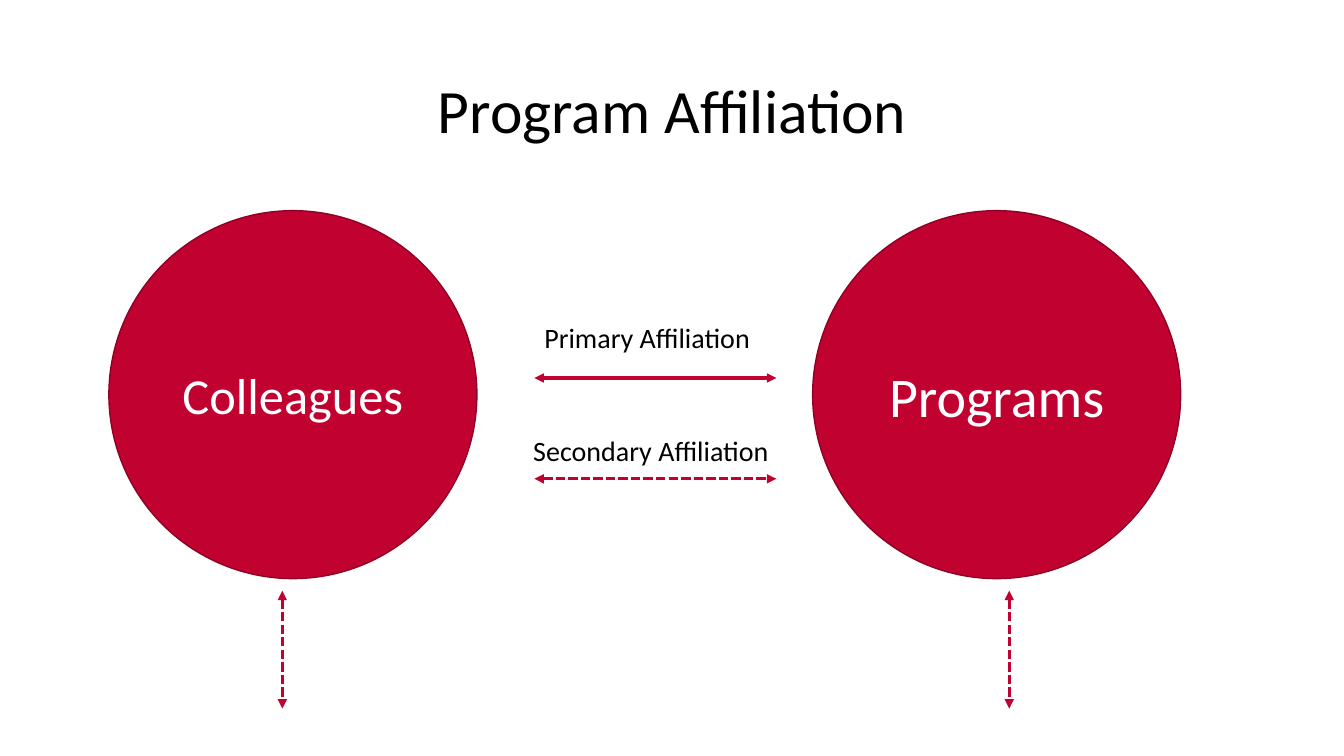
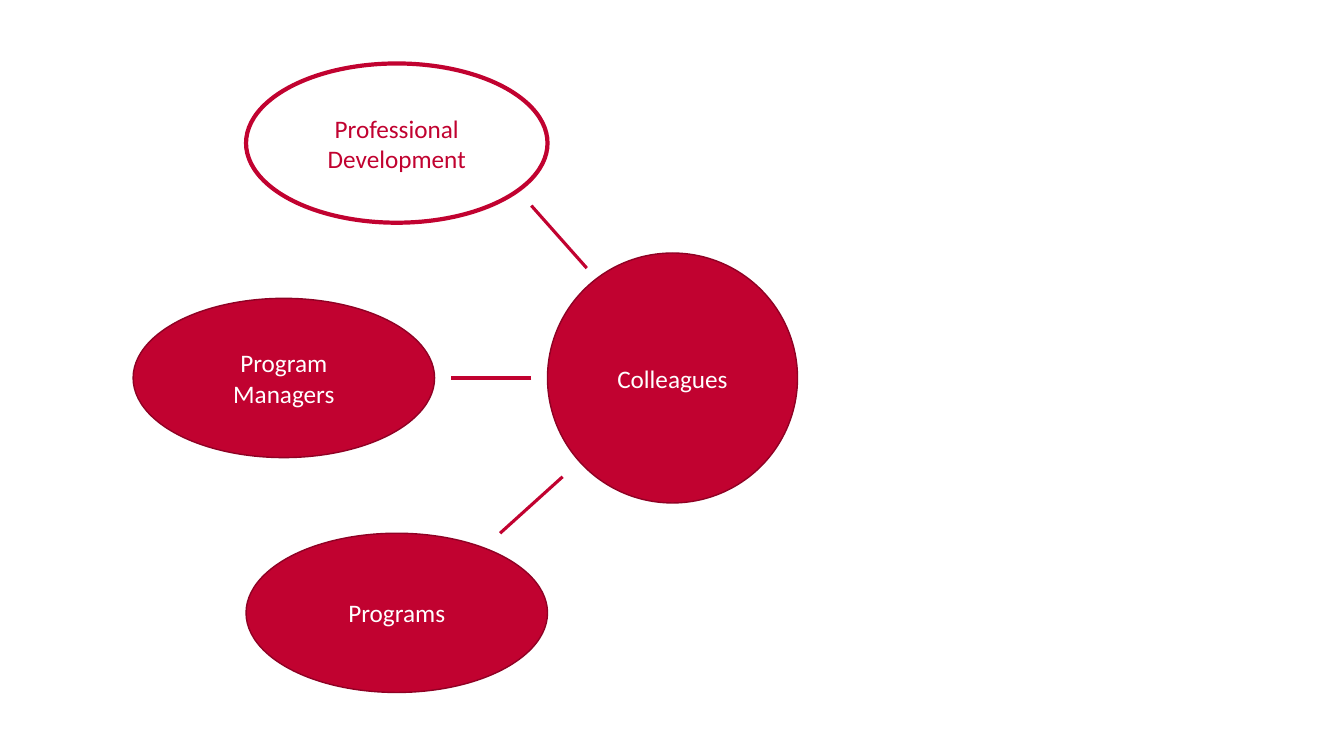
from dataclasses import dataclass

from lxml.etree import SubElement
from pptx import Presentation
from pptx.dml.color import RGBColor
from pptx.enum.dml import MSO_LINE
from pptx.enum.shapes import MSO_CONNECTOR, MSO_SHAPE
from pptx.enum.text import MSO_ANCHOR, PP_ALIGN
from pptx.oxml.ns import qn
from pptx.util import Inches, Pt


@dataclass(frozen=True)
class Theme:
    font: str = "Calibri"
    red: str = "C10230"
    dark_red: str = "8F0124"
    black: str = "000000"
    white: str = "FFFFFF"
    title: int = 44
    label: int = 20
    node: int = 18
    edge: float = 1
    line: float = 2.25
    outline: float = 3


T = Theme()


def rgb(color):
    return RGBColor.from_string(color)


# Shared parts
def write(tf, text, size, color=T.black, align=PP_ALIGN.LEFT,
          anchor=MSO_ANCHOR.TOP, spacing=None):
    tf.word_wrap = True
    tf.vertical_anchor = anchor
    p = tf.paragraphs[0]
    p.alignment = align
    if spacing:
        p.line_spacing = spacing
    r = p.add_run()
    r.text = text
    r.font.name = T.font
    r.font.size = Pt(size)
    r.font.color.rgb = rgb(color)


def add_text(s, box, text, size, **fmt):
    tb = s.shapes.add_textbox(*map(Inches, box))
    write(tb.text_frame, text, size, **fmt)


def add_title(s, box, text):
    add_text(s, box, text, T.title, align=PP_ALIGN.CENTER,
             anchor=MSO_ANCHOR.MIDDLE, spacing=0.9)


def add_ellipse(s, box, text, size, outlined=False):
    sp = s.shapes.add_shape(MSO_SHAPE.OVAL, *map(Inches, box))
    sp.shadow.inherit = False
    sp.fill.solid()
    sp.fill.fore_color.rgb = rgb(T.white if outlined else T.red)
    sp.line.color.rgb = rgb(T.red if outlined else T.dark_red)
    sp.line.width = Pt(T.outline if outlined else T.edge)
    write(sp.text_frame, text, size, color=T.red if outlined else T.white,
          align=PP_ALIGN.CENTER, anchor=MSO_ANCHOR.MIDDLE)


def add_line(s, start, end, arrows=False, dashed=False):
    ln = s.shapes.add_connector(MSO_CONNECTOR.STRAIGHT,
                                *map(Inches, (*start, *end)))
    ln.line.color.rgb = rgb(T.red)
    ln.line.width = Pt(T.line)
    if dashed:
        ln.line.dash_style = MSO_LINE.SQUARE_DOT
    if arrows:
        for tag in ("a:headEnd", "a:tailEnd"):
            SubElement(ln.line._get_or_add_ln(), qn(tag)).set("type", "triangle")
    SubElement(ln._element.spPr, qn("a:effectLst"))


# Two circles joined by labelled arrows
def affiliation_diagram(s, box):
    x, y, w, h = box
    circles = [("Colleagues", 36, x, 1.72), ("Programs", 40, x + w - h, 1.95)]
    for text, size, left, arrow_dx in circles:
        add_ellipse(s, (left, y, h, h), text, size)
        arrow_x, arrow_y = left + arrow_dx, y + h + 0.12
        add_line(s, (arrow_x, arrow_y), (arrow_x, arrow_y + 1.17),
                 arrows=True, dashed=True)

    # Arrows between the circles: text, label box offset and width, arrow offset
    links = [("Primary Affiliation", 4.22, 1.04, 2.39, 1.66, False),
             ("Secondary Affiliation", 4.11, 2.16, 2.59, 2.66, True)]
    for text, dx, dy, width, arrow_dy, dashed in links:
        add_text(s, (x + dx, y + dy, width, 0.44), text, T.label)
        add_line(s, (x + 4.22, y + arrow_dy), (x + 6.62, y + arrow_dy),
                 arrows=True, dashed=dashed)


# One circle with three ellipses on its left
def colleague_map(s, box):
    x, y, w, h = box
    hub, node_w, node_h = 2.48, 2.99, 1.58
    add_ellipse(s, (x + w - hub, y + (h - hub) / 2, hub, hub),
                "Colleagues", T.node)

    # Ellipses, evenly spaced: text, left offset, outlined, line to the circle
    nodes = [
        ("Professional Development", 1.12, True, (4.5, 2.03), (3.95, 1.41)),
        ("Program Managers", 0, False, (3.95, 3.12), (3.15, 3.12)),
        ("Programs", 1.12, False, (4.26, 4.1), (3.64, 4.66)),
    ]
    step = (h - node_h) / (len(nodes) - 1)
    for i, (text, dx, outlined, start, end) in enumerate(nodes):
        add_ellipse(s, (x + dx, y + i * step, node_w, node_h),
                    text, T.node, outlined)
        add_line(s, (x + start[0], y + start[1]), (x + end[0], y + end[1]))


def main():
    prs = Presentation()
    prs.slide_width, prs.slide_height = Inches(13.33), Inches(7.5)
    blank = prs.slide_layouts[6]

    s = prs.slides.add_slide(blank)
    add_title(s, (0.92, 0.4, 11.5, 1.45), "Program Affiliation")
    affiliation_diagram(s, (1.08, 2.09, 10.63, 3.65))

    s = prs.slides.add_slide(blank)
    colleague_map(s, (1.32, 0.63, 6.59, 6.24))

    prs.save("out.pptx")


if __name__ == "__main__":
    main()
